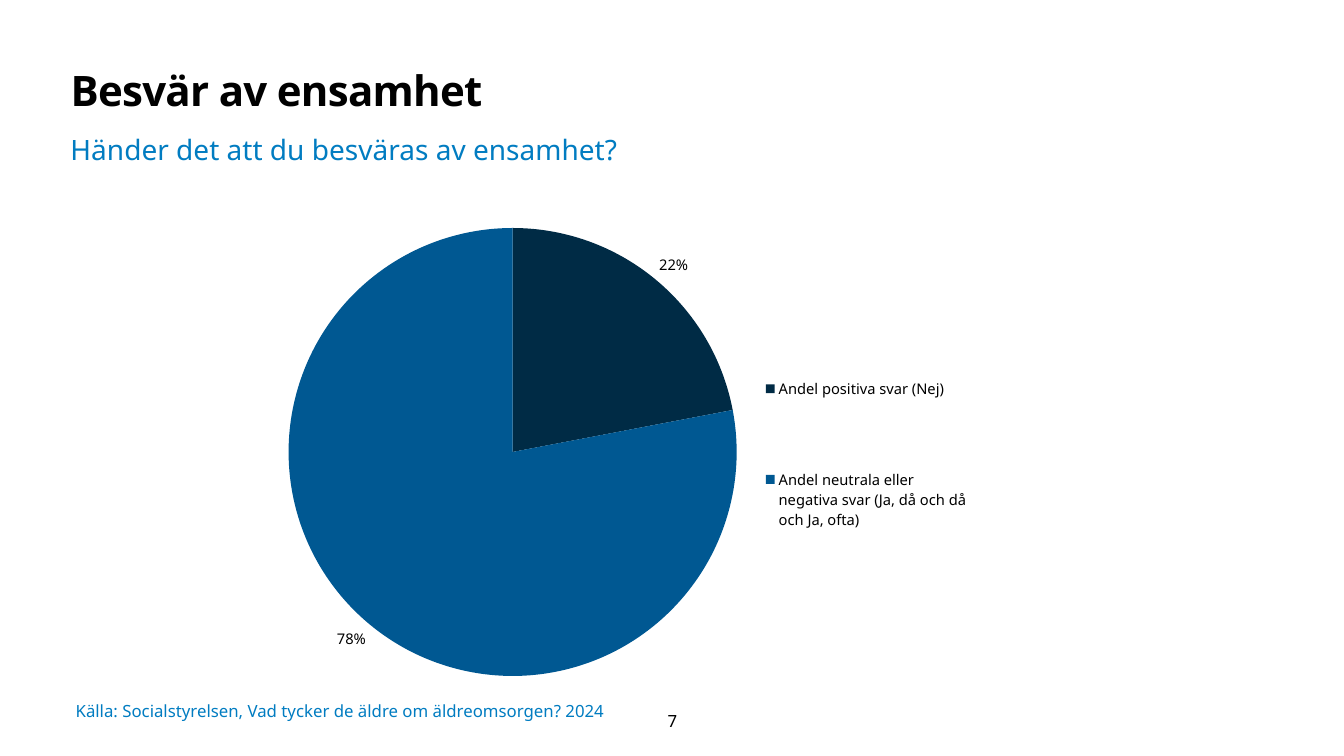
from lxml.etree import SubElement
from pptx import Presentation
from pptx.chart.data import CategoryChartData
from pptx.dml.color import RGBColor
from pptx.enum.chart import XL_CHART_TYPE, XL_LABEL_POSITION, XL_LEGEND_POSITION
from pptx.enum.text import MSO_ANCHOR, PP_ALIGN
from pptx.oxml.ns import qn
from pptx.util import Inches, Pt

FONT = "Noto Sans"
BLACK = RGBColor(0x00, 0x00, 0x00)
BRIGHT_BLUE = RGBColor(0x01, 0x7C, 0xC1)
NAVY = RGBColor(0x00, 0x2B, 0x45)
BLUE = RGBColor(0x00, 0x58, 0x92)

ANSWERS = [
    ("Andel positiva svar (Nej)", 22, NAVY),
    ("Andel neutrala eller negativa svar (Ja, då och då och Ja, ofta)", 78, BLUE),
]


def style_font(font, size, color=BLACK, bold=False):
    font.name = FONT
    font.size = Pt(size)
    font.color.rgb = color
    font.bold = bold


def add_text(slide, text, box, size, color=BLACK, bold=False, align=PP_ALIGN.LEFT,
             anchor=MSO_ANCHOR.TOP, margins=(0.1, 0.05, 0.1, 0.05)):
    """Add one line of text; box is left, top, width, height in inches."""
    shape = slide.shapes.add_textbox(*map(Inches, box))
    frame = shape.text_frame
    frame.word_wrap = True
    frame.vertical_anchor = anchor
    (frame.margin_left, frame.margin_top,
     frame.margin_right, frame.margin_bottom) = map(Inches, margins)
    paragraph = frame.paragraphs[0]
    paragraph.text = text
    paragraph.alignment = align
    style_font(paragraph.font, size, color, bold)
    return paragraph


def set_layout(parent, index, box, inner=False):
    """Place a chart part by shares of the chart's size."""
    for old_layout in parent.findall(qn("c:layout")):
        parent.remove(old_layout)
    layout = SubElement(parent, qn("c:layout"))
    parent.insert(index, layout)
    manual = SubElement(layout, qn("c:manualLayout"))
    settings = [("layoutTarget", "inner")] if inner else []
    settings += [("xMode", "edge"), ("yMode", "edge")]
    settings += zip("xywh", box)
    for name, value in settings:
        SubElement(manual, qn(f"c:{name}")).set("val", str(value))


def add_answer_pie(slide, answers, box):
    data = CategoryChartData()
    data.categories = [label for label, _, _ in answers]
    data.add_series("Series 1", [value for _, value, _ in answers])
    chart = slide.shapes.add_chart(XL_CHART_TYPE.PIE, *map(Inches, box), data).chart
    chart.has_title = False
    style_font(chart.font, 10)

    # Slices and percentages
    plot = chart.plots[0]
    for index, (_, _, color) in enumerate(answers):
        fill = plot.series[0].points[index].format.fill
        fill.solid()
        fill.fore_color.rgb = color
    plot.has_data_labels = True
    labels = plot.data_labels
    labels.show_percentage = True
    labels.show_value = False
    labels.number_format = "0%"
    labels.number_format_is_linked = False
    labels.position = XL_LABEL_POSITION.OUTSIDE_END
    style_font(labels.font, 10.5)

    # Legend and placement
    chart.has_legend = True
    legend = chart.legend
    legend.position = XL_LEGEND_POSITION.RIGHT
    legend.include_in_layout = False
    style_font(legend.font, 10.5)
    plot_area = chart.element.find(".//" + qn("c:plotArea"))
    legend_element = chart.element.find(".//" + qn("c:legend"))
    set_layout(plot_area, 0, (0.09, 0.06, 0.578, 0.892), inner=True)
    set_layout(legend_element, 1, (0.7, 0.22, 0.27, 0.58))


def main():
    presentation = Presentation()
    presentation.slide_width = Inches(13.33)
    presentation.slide_height = Inches(7.5)
    slide = presentation.slides.add_slide(presentation.slide_layouts[6])

    # Headings
    title = add_text(slide, "Besvär av ensamhet", (0.7, 0.59, 10.63, 1.18), 30,
                     bold=True, margins=(0, 0, 0.1, 0.05))
    title.line_spacing = 1.1
    title.runs[0].font._element.set("spc", "-50")
    add_text(slide, "Händer det att du besväras av ensamhet?",
             (0.6, 1.27, 10.15, 0.44), 20, BRIGHT_BLUE)

    # Share of answers
    add_answer_pie(slide, ANSWERS, (2.17, 1.96, 7.69, 4.99))

    # Page number and source
    add_text(slide, "7", (6.16, 6.95, 1.02, 0.4), 12,
             align=PP_ALIGN.CENTER, anchor=MSO_ANCHOR.MIDDLE)
    add_text(slide, "Källa: Socialstyrelsen, Vad tycker de äldre om äldreomsorgen? 2024",
             (0.75, 6.91, 5.91, 0.29), 12, BRIGHT_BLUE,
             anchor=MSO_ANCHOR.MIDDLE, margins=(0, 0, 0, 0))

    presentation.save("out.pptx")


if __name__ == "__main__":
    main()
